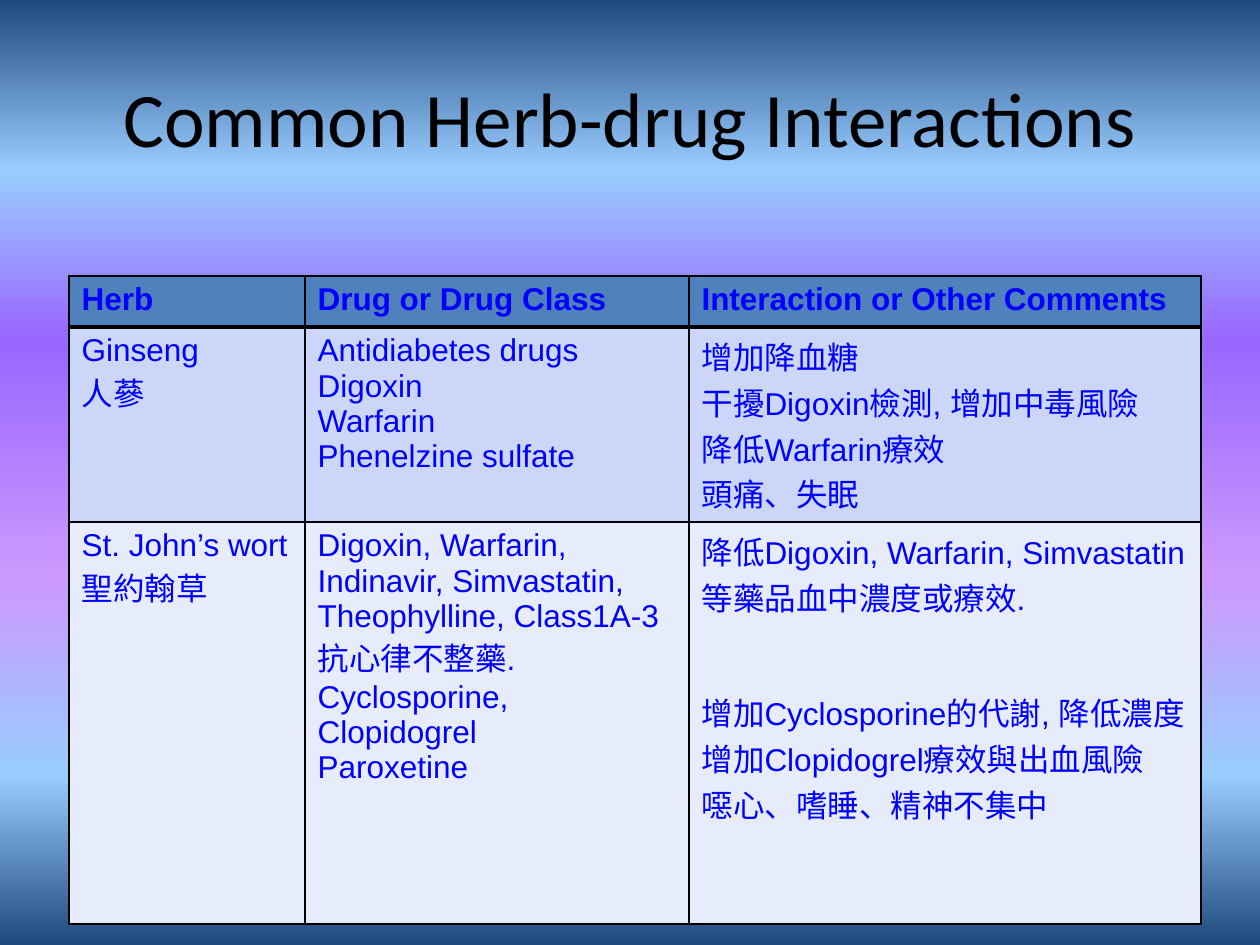
from pptx import Presentation
from pptx.dml.color import RGBColor as Rgb
from pptx.enum.text import MSO_ANCHOR as Anchor, PP_ALIGN as Align
from pptx.oxml.ns import qn
from pptx.util import Emu, Pt
from lxml.etree import SubElement

PX = 914400 / 126
COLORS = {
    "ink": "000000", "text": "0000FF", "header": "4F81BD",
    "band": "CBD6F9", "pale": "E7ECFC",
    "navy": "1F497D", "sky": "99CCFF", "violet": "9966FF", "lilac": "CC99FF",
}
BACKDROP = [(0, "navy"), (18, "sky"), (36, "violet"),
            (61, "lilac"), (82, "sky"), (100, "navy")]
TITLE = {"name": "Calibri", "size": Pt(44), "bold": False}
BODY = {"name": "Arial", "size": Pt(18), "bold": False}
HEADER = {**BODY, "bold": True}
GAP = 70  # space above a paragraph that starts a new group

COLUMNS = [236, 384, 512]
ROWS = [51, 195, 402]
ROW_FILLS = ["header", "band", "pale"]
RULES = [1, 3, 1, 1]  # line widths in points above, between and below the rows

# Each cell lists its paragraphs; a leading "^" asks for a gap above
CELLS = [
    [["Herb"], ["Drug or Drug Class"], ["Interaction or Other Comments"]],
    [["Ginseng", "人蔘"],
     ["Antidiabetes drugs", "Digoxin", "Warfarin", "Phenelzine sulfate"],
     ["增加降血糖", "干擾Digoxin檢測, 增加中毒風險", "降低Warfarin療效", "頭痛、失眠"]],
    [["St. John’s wort", "聖約翰草"],
     ["Digoxin, Warfarin, Indinavir, Simvastatin, Theophylline, Class1A-3 抗心律不整藥.",
      "Cyclosporine,", "Clopidogrel", "Paroxetine"],
     ["降低Digoxin, Warfarin, Simvastatin 等藥品血中濃度或療效.",
      "^增加Cyclosporine的代謝, 降低濃度", "增加Clopidogrel療效與出血風險",
      "噁心、嗜睡、精神不集中"]],
]


def px(length):
    return Emu(round(length * PX))


def color(name):
    return Rgb.from_string(COLORS[name])


class SlideBuilder:
    def __init__(self, page):
        self.page = page

    def backdrop(self, stops):
        fill = self.page.background.fill
        fill.gradient()
        fill.gradient_angle = 270
        stop_list = next(self.page.element.iter(qn("a:gsLst")))
        for old in list(stop_list):
            stop_list.remove(old)
        for percent, name in stops:
            stop = SubElement(stop_list, qn("a:gs"), pos=str(percent * 1000))
            SubElement(stop, qn("a:srgbClr"), val=COLORS[name])

    def add_lines(self, frame, lines, style, ink, align=Align.LEFT):
        for index, line in enumerate(lines):
            para = frame.add_paragraph() if index else frame.paragraphs[0]
            para.alignment = align
            if line.startswith("^"):
                para.space_before = px(GAP)
            span = para.add_run()
            span.text = line.lstrip("^")
            span.font.color.rgb = color(ink)
            for key, value in style.items():
                setattr(span.font, key, value)

    def title(self, text, left, top, width, height):
        box = self.page.shapes.add_textbox(*map(px, (left, top, width, height)))
        frame = box.text_frame
        frame.word_wrap = True
        frame.vertical_anchor = Anchor.MIDDLE
        self.add_lines(frame, [text], TITLE, "ink", Align.CENTER)

    def borders(self, cell, widths):
        props = cell._tc.get_or_add_tcPr()
        for index, (side, width) in enumerate(widths.items()):
            line = SubElement(props, qn(f"a:ln{side}"), w=str(Pt(width)))
            paint = SubElement(line, qn("a:solidFill"))
            SubElement(paint, qn("a:srgbClr"), val=COLORS["ink"])
            props.insert(index, line)  # borders come before the fill

    def table(self, left, top):
        size = (sum(COLUMNS), sum(ROWS))
        grid = self.page.shapes.add_table(
            len(ROWS), len(COLUMNS), *map(px, (left, top, *size))).table
        grid.first_row = grid.horz_banding = False
        for column, width in zip(grid.columns, COLUMNS):
            column.width = px(width)
        for r, (row, height) in enumerate(zip(grid.rows, ROWS)):
            row.height = px(height)
            for cell, lines in zip(row.cells, CELLS[r]):
                cell.fill.solid()
                cell.fill.fore_color.rgb = color(ROW_FILLS[r])
                self.borders(cell, {"L": 1, "R": 1, "T": RULES[r], "B": RULES[r + 1]})
                self.add_lines(cell.text_frame, lines, BODY if r else HEADER, "text")


def main():
    deck = Presentation()
    deck.slide_width, deck.slide_height = px(1260), px(945)
    builder = SlideBuilder(deck.slides.add_slide(deck.slide_layouts[6]))

    # Background and heading
    builder.backdrop(BACKDROP)
    builder.title("Common Herb-drug Interactions", 63, 38, 1134, 158)

    # Interaction table
    builder.table(69, 276)

    deck.save("out.pptx")


if __name__ == "__main__":
    main()
